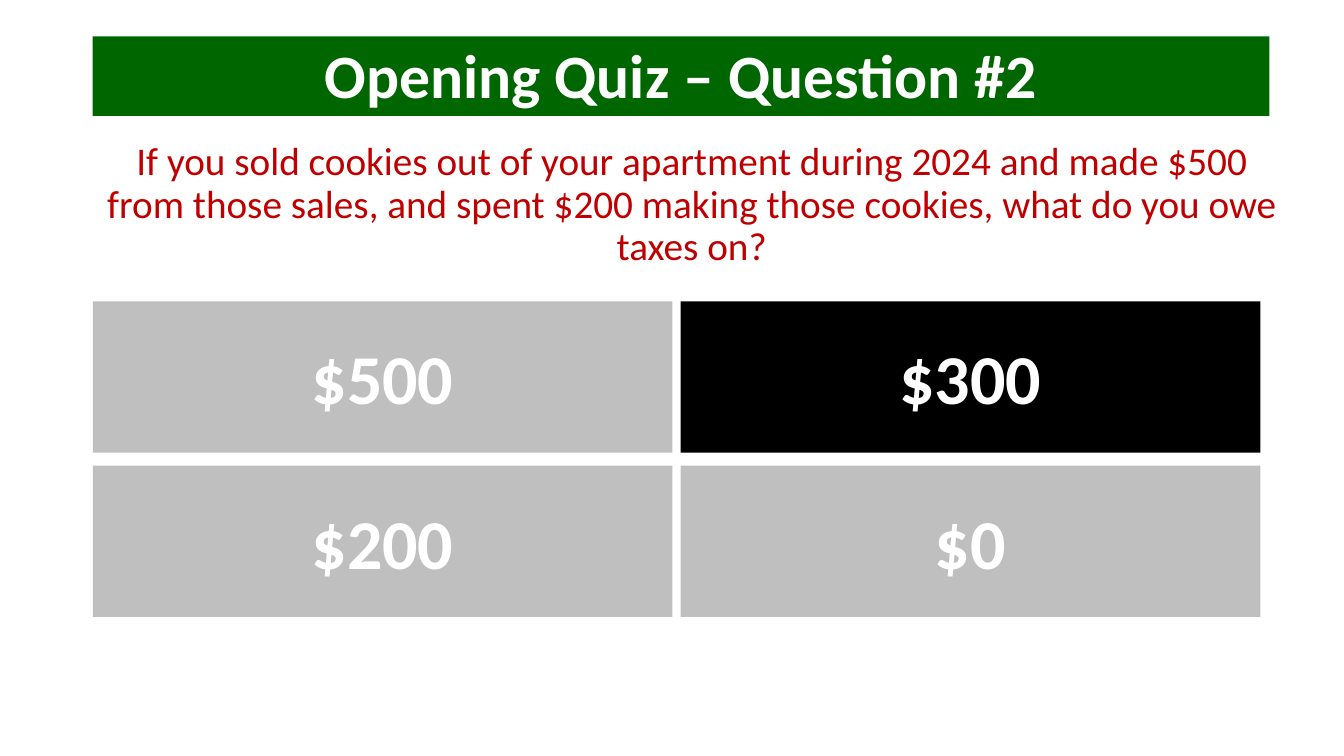
from dataclasses import dataclass

from pptx import Presentation
from pptx import util as u
from pptx.dml.color import RGBColor
from pptx.enum import shapes, text


@dataclass(frozen=True)
class Theme:
    font: str = "Calibri"
    banner: str = "006600"
    question: str = "C00000"
    tile: str = "BFBFBF"
    correct: str = "000000"
    light: str = "FFFFFF"
    title_size: int = 44
    question_size: int = 28
    answer_size: int = 50


THEME = Theme()
LEFT = 0.92


def write(shape, words, size, color, bold=False):
    """Fill a shape with one centred paragraph."""
    shape.text_frame.word_wrap = True
    paragraph = shape.text_frame.paragraphs[0]
    paragraph.alignment = text.PP_ALIGN.CENTER
    paragraph.line_spacing = 0.9
    run = paragraph.add_run()
    run.text = words
    run.font.name = THEME.font
    run.font.size = u.Pt(size)
    run.font.bold = bold
    run.font.color.rgb = RGBColor.from_string(color)


def add_block(slide, box, fill, words, size, top_margin):
    """Draw a flat rectangle with bold light text in its middle."""
    shape = slide.shapes.add_shape(
        shapes.MSO_SHAPE.RECTANGLE, *map(u.Inches, box))
    shape.shadow.inherit = False
    shape.fill.solid()
    shape.fill.fore_color.rgb = RGBColor.from_string(fill)
    shape.line.fill.background()
    frame = shape.text_frame
    frame.vertical_anchor = text.MSO_ANCHOR.MIDDLE
    frame.margin_top = u.Inches(top_margin)
    write(shape, words, size, THEME.light, bold=True)


def add_question(slide, box, words):
    shape = slide.shapes.add_textbox(*map(u.Inches, box))
    write(shape, words, THEME.question_size, THEME.question)


def add_answers(slide, answers, correct):
    """Lay the answers out in a grid two columns wide."""
    width, height, top = 5.75, 1.5, 2.99
    column_step, row_step = 5.83, 1.63
    for index, answer in enumerate(answers):
        row, column = divmod(index, 2)
        box = (LEFT + column * column_step, top + row * row_step, width, height)
        fill = THEME.correct if answer == correct else THEME.tile
        add_block(slide, box, fill, answer, THEME.answer_size, 0.15)


def main():
    presentation = Presentation()
    presentation.slide_width = u.Inches(13.33)
    presentation.slide_height = u.Inches(7.5)
    slide = presentation.slides.add_slide(presentation.slide_layouts[6])

    # Title banner
    add_block(slide, (LEFT, 0.36, 11.67, 0.79), THEME.banner,
              "Opening Quiz – Question #2", THEME.title_size, 0.09)

    # Question and its four answers
    add_question(slide, (LEFT, 1.36, 11.88, 5.4),
                 "If you sold cookies out of your apartment during 2024 and "
                 "made $500 from those sales, and spent $200 making those "
                 "cookies, what do you owe taxes on?")
    add_answers(slide, ["$500", "$300", "$200", "$0"], correct="$300")

    presentation.save("out.pptx")


if __name__ == "__main__":
    main()
